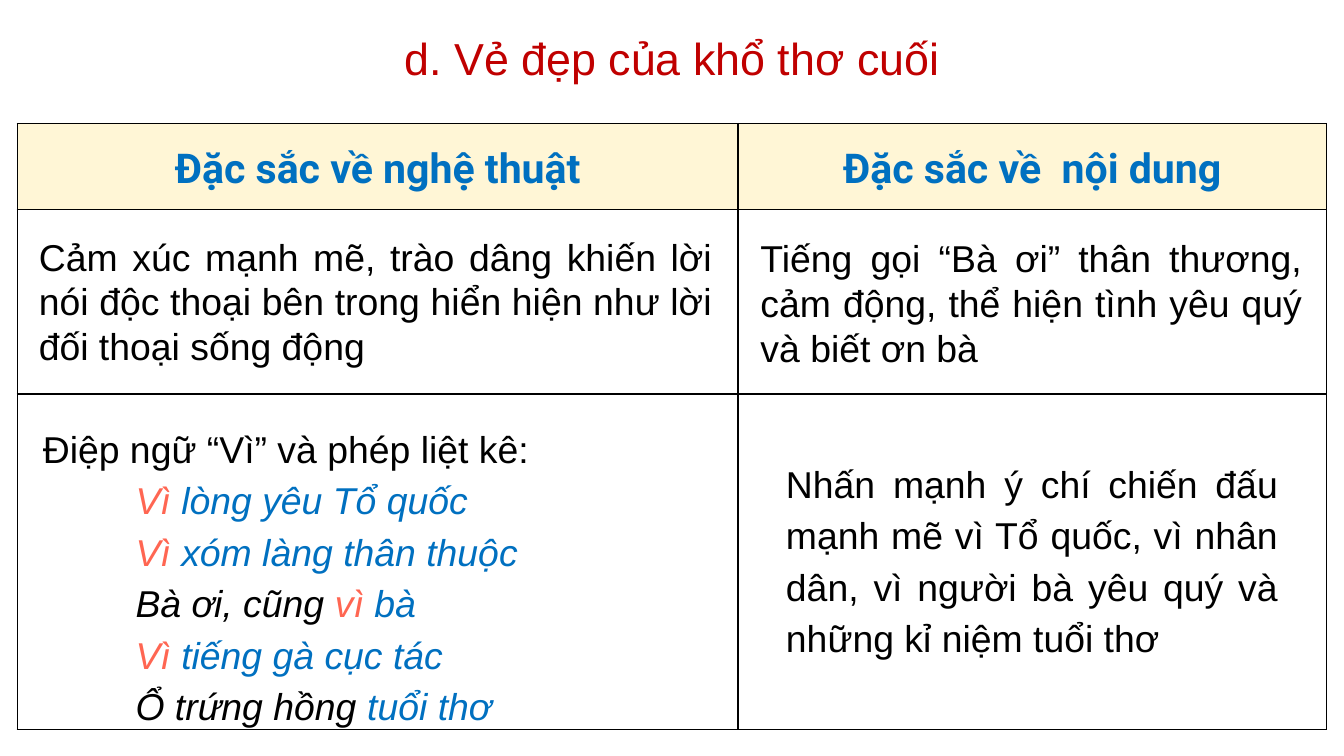
from lxml import etree
from pptx import Presentation
from pptx.dml.color import RGBColor
from pptx.enum.text import MSO_ANCHOR as Anchor, MSO_AUTO_SIZE as AutoSize, PP_ALIGN as Align
from pptx.oxml.ns import qn
from pptx.util import Inches, Pt

COLORS = {
    "black": "000000",
    "title": "C00000",
    "blue": "0070C0",
    "coral": "FF6652",
    "header": "FFF6D6",
}


def add_run(paragraph, text, size, color="black", font="Arial", bold=False, italic=False):
    run = paragraph.add_run()
    run.text = text
    run.font.name = font
    run.font.size = Pt(size)
    run.font.bold = bold
    run.font.italic = italic
    run.font.color.rgb = RGBColor.from_string(COLORS[color])


def add_text_box(slide, left, top, width, height):
    box = slide.shapes.add_textbox(Inches(left), Inches(top), Inches(width), Inches(height))
    box.text_frame.word_wrap = True
    return box.text_frame


# Widescreen slide, 16:9
presentation = Presentation()
presentation.slide_width = Inches(10)
presentation.slide_height = Inches(10) * 9 // 16
slide = presentation.slides.add_slide(presentation.slide_layouts[5])

# Title
title = slide.shapes.title
title.left, title.top = Inches(0.89), Inches(0.12)
title.width, title.height = Inches(8.22), Inches(0.54)
title.text_frame.auto_size = AutoSize.NONE
title.text_frame.vertical_anchor = Anchor.TOP
paragraph = title.text_frame.paragraphs[0]
paragraph.alignment = Align.CENTER
paragraph.line_spacing = 1.15
add_run(paragraph, "d. Vẻ đẹp của khổ thơ cuối", 24, "title")

# Table grid
column_widths = [5.36, 4.38]
row_heights = [0.64, 1.37, 2.5]
table = slide.shapes.add_table(
    3, 2, Inches(0.13), Inches(0.92), Inches(sum(column_widths)), Inches(sum(row_heights))
).table
for column, width in zip(table.columns, column_widths):
    column.width = Inches(width)
for row, height in zip(table.rows, row_heights):
    row.height = Inches(height)

# Cell borders and fills
for cell in table.iter_cells():
    properties = cell._tc.get_or_add_tcPr()
    for side in ("a:lnL", "a:lnR", "a:lnT", "a:lnB"):
        line = etree.SubElement(properties, qn(side), w=str(Pt(1)))
        fill = etree.SubElement(line, qn("a:solidFill"))
        etree.SubElement(fill, qn("a:srgbClr"), val=COLORS["black"])
    cell.fill.background()

# Header row
for cell, heading in zip(table.rows[0].cells, ["Đặc sắc về nghệ thuật", "Đặc sắc về  nội dung"]):
    cell.fill.solid()
    cell.fill.fore_color.rgb = RGBColor.from_string(COLORS["header"])
    cell.vertical_anchor = Anchor.MIDDLE
    cell.margin_left = cell.margin_right = Inches(0.07)
    cell.margin_top = cell.margin_bottom = 0
    paragraph = cell.text_frame.paragraphs[0]
    paragraph.alignment = Align.CENTER
    paragraph.line_spacing = 1.1
    add_run(paragraph, heading, 22, "blue", font="Roboto", bold=True)

# Justified passages: position, line spacing, text
passages = [
    ((0.19, 1.69, 5.21, 1.11), 1.0,
     "Cảm xúc mạnh mẽ, trào dâng khiến lời nói độc thoại bên trong hiển hiện như lời đối thoại sống động"),
    ((5.56, 1.7, 4.23, 1.11), 1.0,
     "Tiếng gọi “Bà ơi” thân thương, cảm động, thể hiện tình yêu quý và biết ơn bà"),
    ((5.75, 3.33, 3.86, 1.62), 1.15,
     "Nhấn mạnh ý chí chiến đấu mạnh mẽ vì Tổ quốc, vì nhân dân, vì người bà yêu quý và những kỉ niệm tuổi thơ"),
]
for position, spacing, text in passages:
    paragraph = add_text_box(slide, *position).paragraphs[0]
    paragraph.alignment = Align.JUSTIFY
    paragraph.line_spacing = spacing
    add_run(paragraph, text, 20)

# Poem lines under their introduction
poem_lines = [
    [("Vì ", "coral"), ("lòng yêu Tổ quốc", "blue")],
    [("Vì ", "coral"), ("xóm làng thân thuộc", "blue")],
    [("Bà ơi, cũng ", "black"), ("vì ", "coral"), ("bà", "blue")],
    [("Vì ", "coral"), ("tiếng gà cục tác", "blue")],
    [("Ổ trứng hồng ", "black"), ("tuổi thơ", "blue")],
]
poem = add_text_box(slide, 0.22, 3.07, 5.65, 2.4)
add_run(poem.paragraphs[0], "Điệp ngữ “Vì” và phép liệt kê:", 20)
for poem_line in poem_lines:
    paragraph = poem.add_paragraph()
    paragraph._p.get_or_add_pPr().set("indent", str(Inches(0.69)))
    for text, color in poem_line:
        add_run(paragraph, text, 20, color, italic=True)
for paragraph in poem.paragraphs:
    paragraph.alignment = Align.JUSTIFY
    paragraph.line_spacing = 1.15

presentation.save("out.pptx")
